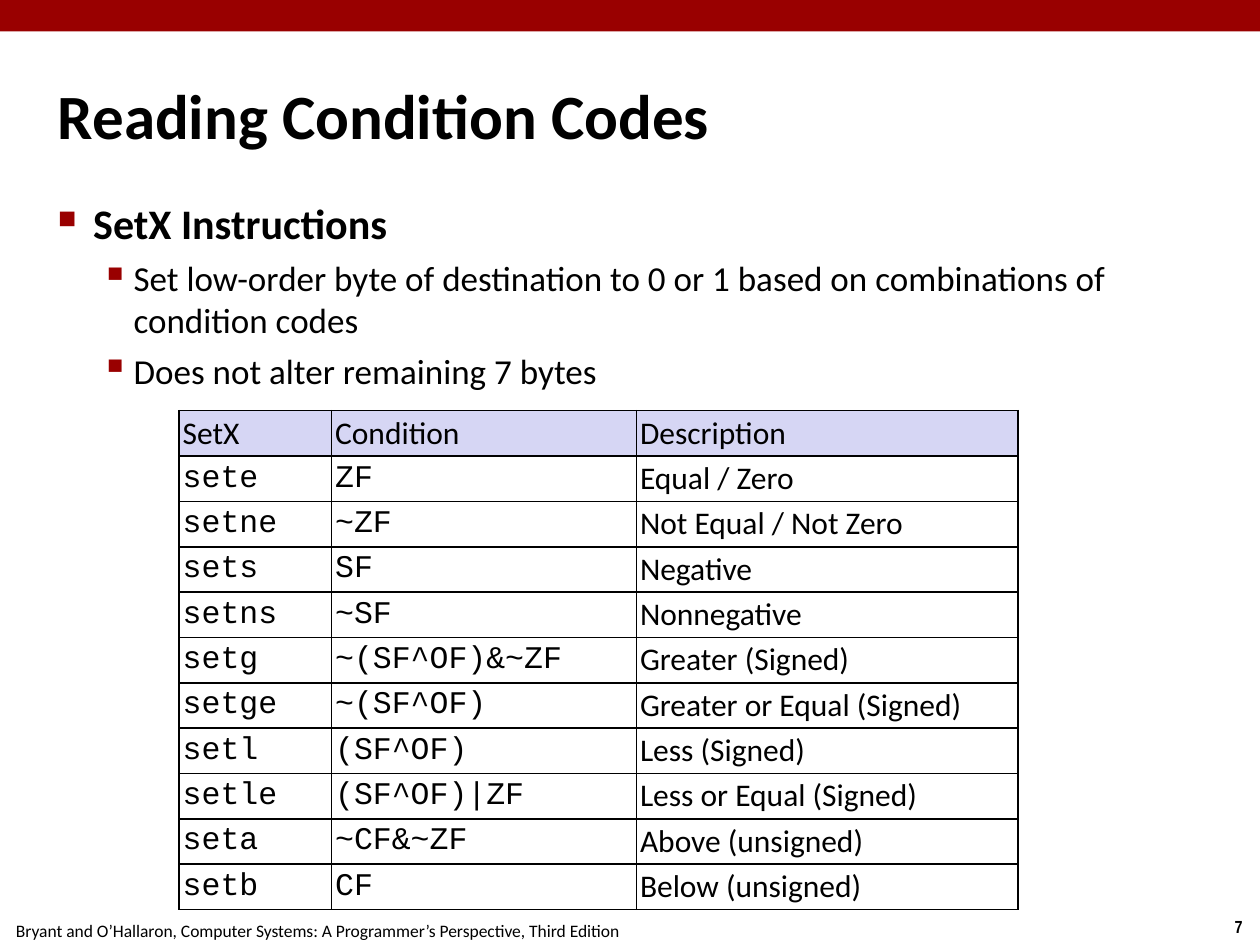
from lxml import etree
from pptx import Presentation
from pptx.dml.color import RGBColor
from pptx.enum.shapes import MSO_SHAPE
from pptx.enum.text import MSO_ANCHOR, PP_ALIGN
from pptx.oxml.ns import qn
from pptx.util import Inches, Pt

RECTANGLE = MSO_SHAPE.RECTANGLE
TOP, MIDDLE = MSO_ANCHOR.TOP, MSO_ANCHOR.MIDDLE
LEFT, CENTER = PP_ALIGN.LEFT, PP_ALIGN.CENTER

GRID_COLUMNS, GRID_ROWS = 100, 75
GRID_UNIT = Inches(0.1)
SANS, NARROW, MONO = "Calibri", "Arial Narrow", "Courier New"
CRIMSON, LAVENDER, BLACK = "990000", "D6D6F4", "000000"
BORDER_SIDES = ("a:lnL", "a:lnR", "a:lnT", "a:lnB")

COLUMN_WIDTHS = (12.1, 24.2, 30.3)
ROW_HEIGHT = 3.6
COLUMN_FONTS = (MONO, MONO, SANS)
HEADINGS = ("SetX", "Condition", "Description")
INSTRUCTIONS = (
    ("sete", "ZF", "Equal / Zero"),
    ("setne", "~ZF", "Not Equal / Not Zero"),
    ("sets", "SF", "Negative"),
    ("setns", "~SF", "Nonnegative"),
    ("setg", "~(SF^OF)&~ZF", "Greater (Signed)"),
    ("setge", "~(SF^OF)", "Greater or Equal (Signed)"),
    ("setl", "(SF^OF)", "Less (Signed)"),
    ("setle", "(SF^OF)|ZF", "Less or Equal (Signed)"),
    ("seta", "~CF&~ZF", "Above (unsigned)"),
    ("setb", "CF", "Below (unsigned)"),
)

HEADLINE = dict(size=24, bold=True, before=6, margin=0.28, hanging=0.28,
                bullet="■", bullet_share=60)
DETAIL = dict(size=20, before=5, level=1, margin=0.6, hanging=0.26,
              bullet="▪", bullet_share=110)
POINTS = (
    ("SetX Instructions", HEADLINE),
    ("Set low-order byte of destination to 0 or 1 based on combinations of "
     "condition codes", DETAIL),
    ("Does not alter remaining 7 bytes", DETAIL),
)


def color(value):
    return RGBColor.from_string(value)


def grid(*lengths):
    return [round(length * GRID_UNIT) for length in lengths]


def paint(target, value):
    target.fill.solid()
    target.fill.fore_color.rgb = color(value)


def add_bullet(properties, symbol, share):
    tint = etree.SubElement(properties, qn("a:buClr"))
    etree.SubElement(tint, qn("a:srgbClr"), val=CRIMSON)
    etree.SubElement(properties, qn("a:buSzPct"), val=str(share * 1000))
    etree.SubElement(properties, qn("a:buChar"), char=symbol)


def write(paragraph, text, size=18, font=SANS, bold=False, align=LEFT, before=0,
          level=0, margin=0, hanging=0, bullet=None, bullet_share=100):
    paragraph.alignment = align
    paragraph.level = level
    paragraph.space_before = Pt(before)
    properties = paragraph._p.get_or_add_pPr()
    properties.set("marL", str(Inches(margin)))
    properties.set("indent", str(-Inches(hanging)))
    if bullet:
        add_bullet(properties, bullet, bullet_share)
    run = paragraph.add_run()
    run.text = text
    run.font.size = Pt(size)
    run.font.name = font
    run.font.bold = bold
    run.font.color.rgb = color(BLACK)


def set_margins(holder, horizontal, vertical):
    holder.margin_left = holder.margin_right = Inches(horizontal)
    holder.margin_top = holder.margin_bottom = Inches(vertical)


def add_frame(slide, area, wrap=True, anchor=TOP, margins=(0.04, 0.04)):
    frame = slide.shapes.add_textbox(*grid(*area)).text_frame
    frame.word_wrap = wrap
    frame.vertical_anchor = anchor
    set_margins(frame, *margins)
    return frame


def add_banner(slide):
    banner = slide.shapes.add_shape(RECTANGLE, *grid(0, 0, GRID_COLUMNS, 2.5))
    banner.shadow.inherit = False
    paint(banner, CRIMSON)
    banner.line.fill.background()


def add_footer(slide, area, text, **style):
    frame = add_frame(slide, area, wrap=False, margins=(0.1, 0.05))
    write(frame.paragraphs[0], text, size=10, align=CENTER, **style)


def add_points(slide, area):
    frame = add_frame(slide, area)
    for index, (text, style) in enumerate(POINTS):
        paragraph = frame.add_paragraph() if index else frame.paragraphs[0]
        write(paragraph, text, **style)


def add_borders(cell):
    properties = cell._tc.get_or_add_tcPr()
    for position, side in enumerate(BORDER_SIDES):
        border = etree.Element(qn(side), w=str(Pt(1)))
        stroke = etree.SubElement(border, qn("a:solidFill"))
        etree.SubElement(stroke, qn("a:srgbClr"), val=BLACK)
        properties.insert(position, border)


def add_instruction_table(slide, left, top):
    entries = (HEADINGS, *INSTRUCTIONS)
    area = grid(left, top, sum(COLUMN_WIDTHS), ROW_HEIGHT * len(entries))
    table = slide.shapes.add_table(len(entries), len(HEADINGS), *area).table
    table.horz_banding = False
    for column, width in zip(table.columns, grid(*COLUMN_WIDTHS)):
        column.width = width
    for row_index, entry in enumerate(entries):
        for column_index, text in enumerate(entry):
            cell = table.cell(row_index, column_index)
            set_margins(cell, 0.03, 0.02)
            cell.vertical_anchor = MIDDLE
            if row_index:
                cell.fill.background()
                font = COLUMN_FONTS[column_index]
            else:
                paint(cell, LAVENDER)
                font = SANS
            add_borders(cell)
            write(cell.text_frame.paragraphs[0], text, font=font)


def main():
    presentation = Presentation()
    presentation.slide_width, presentation.slide_height = grid(GRID_COLUMNS, GRID_ROWS)
    slide = presentation.slides.add_slide(presentation.slide_layouts[6])
    add_footer(slide, (96.6, 72.2, 3.4, 2.7), "7", font=NARROW, bold=True)
    add_footer(slide, (-0.2, 72.5, 50.8, 2.7),
               "Bryant and O’Hallaron, Computer Systems: "
               "A Programmer’s Perspective, Third Edition")
    add_banner(slide)
    title = add_frame(slide, (4.2, 2.8, 91.7, 12.5), anchor=MIDDLE)
    write(title.paragraphs[0], "Reading Condition Codes", size=36, bold=True,
          margin=0.13, hanging=0.13)
    add_points(slide, (4.2, 15.3, 91.7, 59.4))
    add_instruction_table(slide, 14.2, 32.6)
    presentation.save("out.pptx")


if __name__ == "__main__":
    main()
